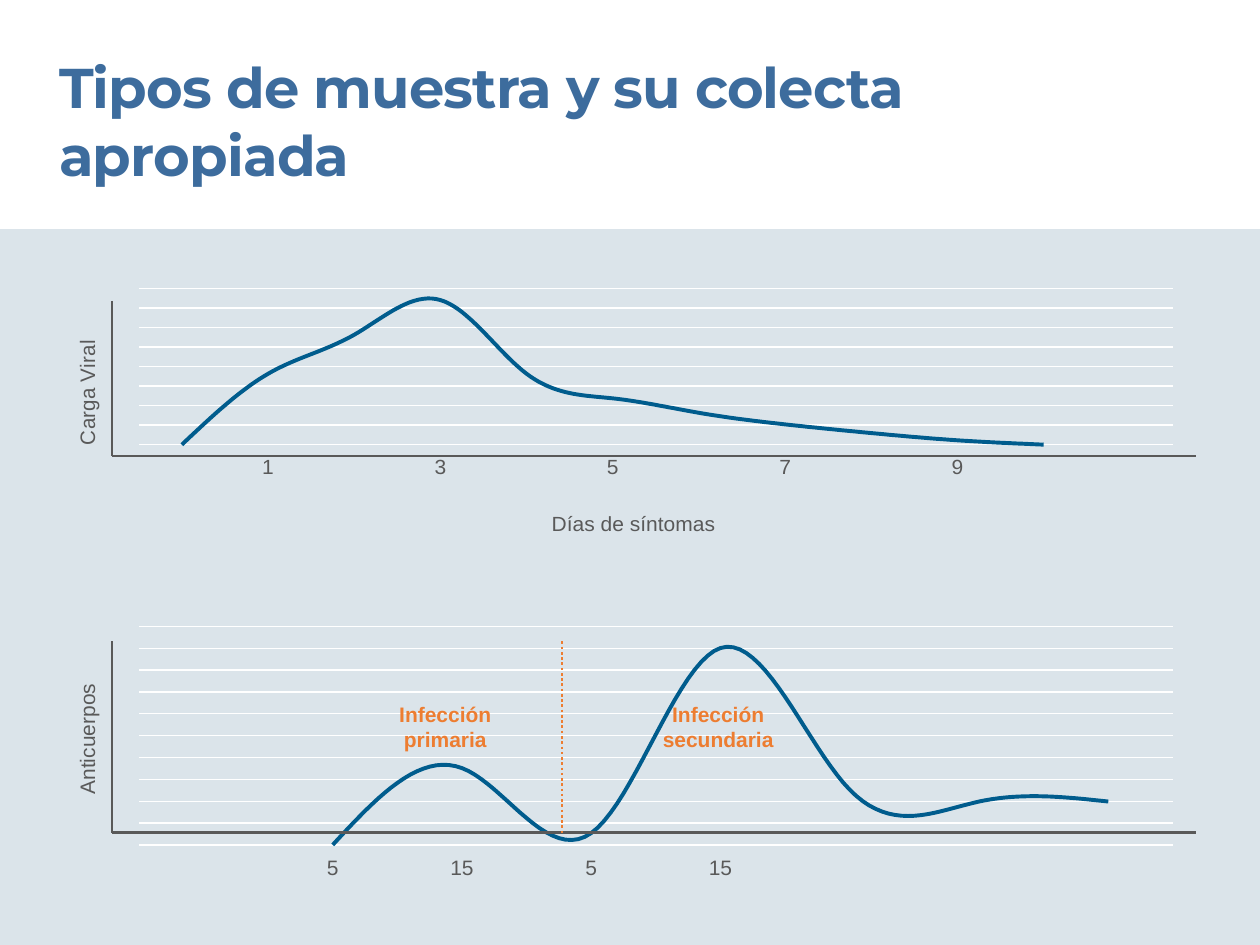
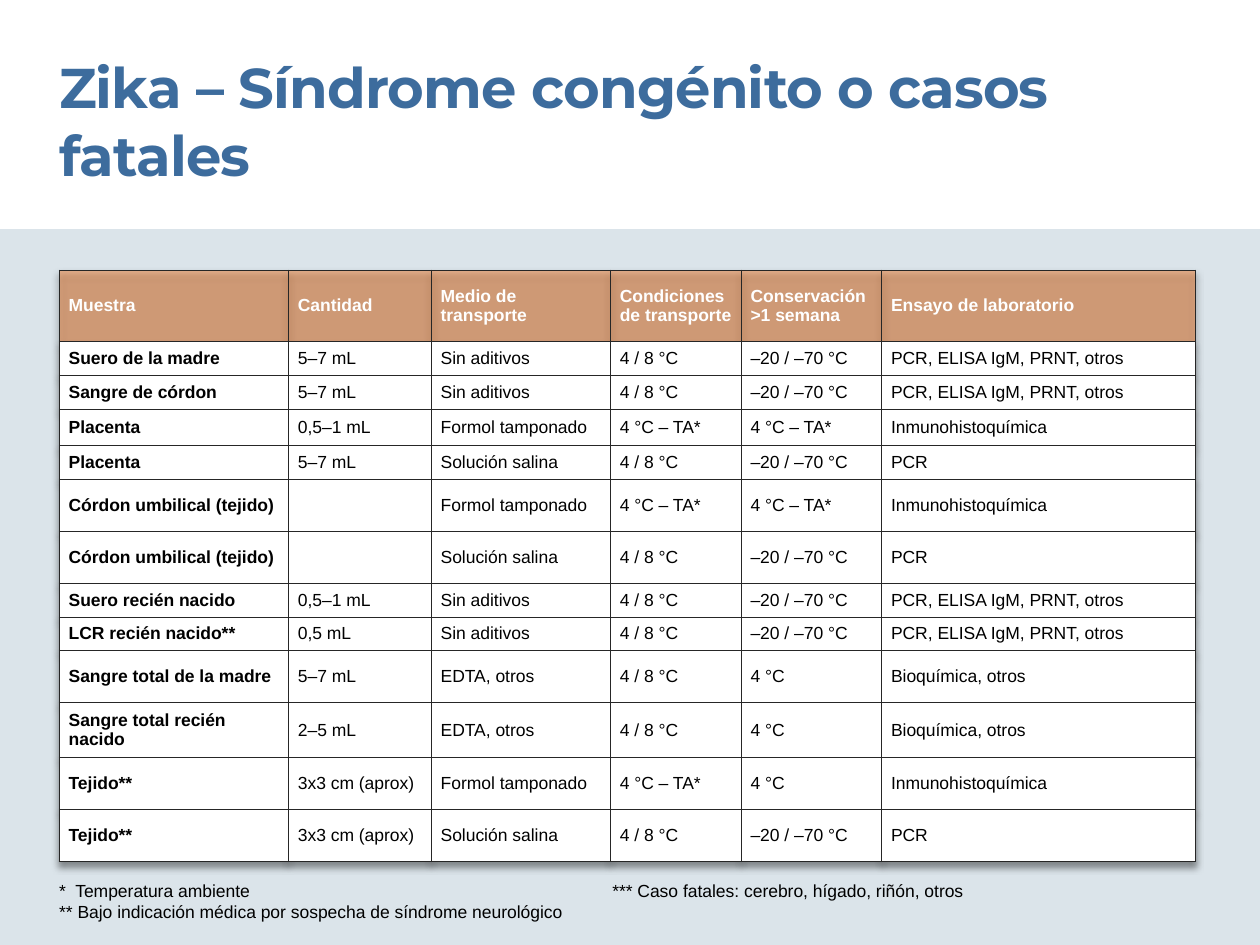
from dataclasses import dataclass

import lxml.etree
import pptx
import pptx.chart.data
import pptx.dml.color
import pptx.enum.chart
import pptx.enum.dml
import pptx.enum.shapes
import pptx.enum.text
import pptx.oxml.ns
import pptx.oxml.xmlchemy
import pptx.util

Pt = pptx.util.Pt
qn = pptx.oxml.ns.qn
new_element = pptx.oxml.xmlchemy.OxmlElement


@dataclass(frozen=True)
class Theme:
    band: str = "DBE4EA"
    heading: str = "3D6C9D"
    curve: str = "005C8D"
    axis: str = "595959"
    accent: str = "ED7D31"
    border: str = "262626"
    black: str = "000000"
    white: str = "FFFFFF"
    heading_font: str = "Montserrat"
    body_font: str = "Arial"
    heading_size: int = 32
    label_size: int = 12
    table_size: int = 10


THEME = Theme()
LEFT, WIDTH = 33.84, 649.44
RIGHT = LEFT + WIDTH
AXIS_LEFT = 64.08

COLUMN_WIDTHS = [131, 81.6, 102.4, 74.7, 80.3, 179.3]
ROW_HEIGHTS = [41, 18, 18, 21, 18, 29.7, 29.7, 18, 18, 29.7, 29.7, 29.7, 29.7]
COLD, FROZEN, AMBIENT = "4 / 8 °C", "–20 / –70 °C", "4 °C – TA*"
PLAIN, FORMALIN, SALINE = "Sin aditivos", "Formol tamponado", "Solución salina"
PANEL, TISSUE_TEST = "PCR, ELISA IgM, PRNT, otros", "Inmunohistoquímica"
SAMPLES = [
    ["Muestra", "Cantidad", "Medio de transporte", "Condiciones de transporte",
     "Conservación >1 semana", "Ensayo de laboratorio"],
    ["Suero de la madre", "5–7 mL", PLAIN, COLD, FROZEN, PANEL],
    ["Sangre de córdon", "5–7 mL", PLAIN, COLD, FROZEN, PANEL],
    ["Placenta", "0,5–1 mL", FORMALIN, AMBIENT, AMBIENT, TISSUE_TEST],
    ["Placenta", "5–7 mL", SALINE, COLD, FROZEN, "PCR"],
    ["Córdon umbilical (tejido)", "", FORMALIN, AMBIENT, AMBIENT, TISSUE_TEST],
    ["Córdon umbilical (tejido)", "", SALINE, COLD, FROZEN, "PCR"],
    ["Suero recién nacido", "0,5–1 mL", PLAIN, COLD, FROZEN, PANEL],
    ["LCR recién nacido**", "0,5 mL", PLAIN, COLD, FROZEN, PANEL],
    ["Sangre total de la madre", "5–7 mL", "EDTA, otros", COLD, "4 °C", "Bioquímica, otros"],
    ["Sangre total recién nacido", "2–5 mL", "EDTA, otros", COLD, "4 °C", "Bioquímica, otros"],
    ["Tejido**", "3x3 cm (aprox)", FORMALIN, AMBIENT, "4 °C", TISSUE_TEST],
    ["Tejido**", "3x3 cm (aprox)", SALINE, COLD, FROZEN, "PCR"],
]


def rgb(color):
    return pptx.dml.color.RGBColor.from_string(color)


def style_font(font, size, color, bold=False, name=THEME.body_font):
    font.name = name
    font.size = Pt(size)
    font.bold = bold
    font.color.rgb = rgb(color)


def add_span(para, text, size, color, bold=False, name=THEME.body_font):
    span = para.add_run()
    span.text = text
    style_font(span.font, size, color, bold, name)
    return span


def add_text(page, left, top, width, height, lines, size, color,
             bold=False, name=THEME.body_font, centred=False):
    box = page.shapes.add_textbox(Pt(left), Pt(top), Pt(width), Pt(height))
    frame = box.text_frame
    frame.word_wrap = True
    frame.auto_size = pptx.enum.text.MSO_AUTO_SIZE.SHAPE_TO_FIT_TEXT
    frame.margin_left = frame.margin_top = frame.margin_right = frame.margin_bottom = 0
    spans = []
    for index, line in enumerate(lines):
        para = frame.add_paragraph() if index else frame.paragraphs[0]
        if centred:
            para.alignment = pptx.enum.text.PP_ALIGN.CENTER
        spans.append(add_span(para, line, size, color, bold, name))
    return spans


def add_page(deck, title):
    page = deck.slides.add_slide(deck.slide_layouts[6])
    band = page.shapes.add_shape(pptx.enum.shapes.MSO_SHAPE.RECTANGLE,
                                 Pt(0), Pt(131), Pt(720), Pt(409))
    band.shadow.inherit = False
    band.fill.solid()
    band.fill.fore_color.rgb = rgb(THEME.band)
    band.line.fill.background()
    [span] = add_text(page, LEFT, 30.24, 615.6, 77.8, [title], THEME.heading_size,
                      THEME.heading, True, THEME.heading_font)
    span.font._element.set("spc", "-50")
    return page


def add_line(page, start, end, color=THEME.axis, dash=None):
    line = page.shapes.add_connector(pptx.enum.shapes.MSO_CONNECTOR.STRAIGHT,
                                     *map(Pt, start + end))
    line.line.color.rgb = rgb(color)
    line.line.width = Pt(1.5)
    if dash:
        line.line.dash_style = dash
    lxml.etree.SubElement(line._element.spPr, qn("a:effectLst"))


def set_layout(parent, index, **fractions):
    old = parent.find(qn("c:layout"))
    if old is not None:
        parent.remove(old)
    layout = new_element("c:layout")
    manual = lxml.etree.SubElement(layout, qn("c:manualLayout"))
    if "w" in fractions:
        lxml.etree.SubElement(manual, qn("c:layoutTarget")).set("val", "inner")
    for side in "xy":
        lxml.etree.SubElement(manual, qn(f"c:{side}Mode")).set("val", "edge")
    for key, value in fractions.items():
        lxml.etree.SubElement(manual, qn(f"c:{key}")).set("val", str(value))
    parent.insert(index, layout)


def add_axis_title(axis, text, x, y, upright=False):
    axis.has_title = True
    title = axis.axis_title
    add_span(title.text_frame.paragraphs[0], text, THEME.label_size, THEME.axis)
    if upright:
        body = title.text_frame._txBody.bodyPr
        body.set("rot", "-5400000")
        body.set("vert", "horz")
    set_layout(title._element, 1, x=x, y=y)


def add_curve(page, top, categories, values, maximum, steps, plot_top, plot_height):
    data = pptx.chart.data.CategoryChartData()
    data.categories = categories
    data.add_series("Series 1", values)
    chart = page.shapes.add_chart(pptx.enum.chart.XL_CHART_TYPE.LINE, Pt(LEFT), Pt(top),
                                  Pt(WIDTH), Pt(147.6), data).chart
    style_font(chart.font, THEME.table_size, THEME.black)
    chart.has_legend = chart.has_title = False
    chart.plots[0].vary_by_categories = False
    series = chart.plots[0].series[0]
    series.smooth = True
    series.format.line.color.rgb = rgb(THEME.curve)
    series.format.line.width = Pt(2.25)
    series.marker.style = pptx.enum.chart.XL_MARKER_STYLE.NONE
    for axis in (chart.category_axis, chart.value_axis):
        axis.major_tick_mark = axis.minor_tick_mark = pptx.enum.chart.XL_TICK_MARK.NONE
        axis.format.line.fill.background()
    chart.category_axis.tick_label_position = pptx.enum.chart.XL_TICK_LABEL_POSITION.LOW
    style_font(chart.category_axis.tick_labels.font, THEME.label_size, THEME.axis)
    scale = chart.value_axis
    scale.tick_label_position = pptx.enum.chart.XL_TICK_LABEL_POSITION.NONE
    scale.minimum_scale, scale.maximum_scale = 0, maximum
    scale.major_unit = maximum / steps
    scale.has_major_gridlines = True
    scale.major_gridlines.format.line.color.rgb = rgb(THEME.white)
    scale.major_gridlines.format.line.width = Pt(0.75)
    set_layout(chart._chartSpace.find(".//" + qn("c:plotArea")), 0,
               x=0.07, y=plot_top, w=0.91, h=plot_height)
    return chart


def add_axes(page, top, bottom):
    add_line(page, (RIGHT, bottom), (AXIS_LEFT, bottom))
    add_line(page, (AXIS_LEFT, top), (AXIS_LEFT, bottom))


def add_borders(cell):
    properties = cell._tc.get_or_add_tcPr()
    for index, side in enumerate(("lnL", "lnR", "lnT", "lnB")):
        line = new_element(f"a:{side}")
        line.set("w", str(Pt(0.5)))
        fill = lxml.etree.SubElement(line, qn("a:solidFill"))
        lxml.etree.SubElement(fill, qn("a:srgbClr")).set("val", THEME.border)
        properties.insert(index, line)


def set_alpha(color, percent):
    lxml.etree.SubElement(color, qn("a:alpha")).set("val", str(percent * 1000))


def add_table_shadow(table):
    effects = new_element("a:effectLst")
    shadow = lxml.etree.SubElement(effects, qn("a:outerShdw"))
    shadow.set("blurRad", str(Pt(4)))
    shadow.set("dist", str(Pt(3)))
    shadow.set("dir", "5400000")
    color = lxml.etree.SubElement(shadow, qn("a:srgbClr"))
    color.set("val", THEME.black)
    set_alpha(color, 40)
    table._tbl.tblPr.insert(0, effects)


def fill_cell(cell, text, header, bold):
    cell.vertical_anchor = pptx.enum.text.MSO_ANCHOR.MIDDLE
    cell.margin_left = cell.margin_right = Pt(5.4)
    cell.margin_top = cell.margin_bottom = Pt(3.6)
    cell.fill.solid()
    cell.fill.fore_color.rgb = rgb(THEME.accent if header else THEME.white)
    if header:
        set_alpha(cell._tc.tcPr.find(".//" + qn("a:srgbClr")), 50)
    add_borders(cell)
    if text:
        add_span(cell.text_frame.paragraphs[0], text, THEME.table_size,
                 THEME.white if header else THEME.black, bold)


def add_sample_table(page, top):
    table = page.shapes.add_table(len(SAMPLES), len(COLUMN_WIDTHS), Pt(LEFT), Pt(top),
                                  Pt(WIDTH), Pt(sum(ROW_HEIGHTS))).table
    table.horz_banding = False
    add_table_shadow(table)
    for column, width in zip(table.columns, COLUMN_WIDTHS):
        column.width = Pt(width)
    for row, height in zip(table.rows, ROW_HEIGHTS):
        row.height = Pt(height)
    for row, texts in enumerate(SAMPLES):
        for column, text in enumerate(texts):
            fill_cell(table.cell(row, column), text, row == 0, row == 0 or column == 0)


def build_curves_page(deck):
    page = add_page(deck, "Tipos de muestra y su colecta apropiada")
    viral = add_curve(page, 162, ["", "1", "", "3", "", "5", "", "7", "", "9", "", ""],
                      [0, 49, 76, 100, 49, 32, 22, 14, 8, 3, 0, None], 108, 8, 0.02, 0.62)
    add_axis_title(viral.category_axis, "Días de síntomas", 0.43, 0.89)
    add_axis_title(viral.value_axis, "Carga Viral", 0.01, 0.22, True)
    antibodies = add_curve(page, 355, ["", "5", "15", "5", "15", "", "", ""],
                           [None, 0, 39, 6, 100, 28, 22, 22], 111, 10, 0.02, 0.85)
    add_axis_title(antibodies.value_axis, "Anticuerpos", 0.01, 0.23, True)
    add_axes(page, 172, 260.64)
    add_axes(page, 366.5, 475.9)
    add_line(page, (321.1, 366.5), (321.1, 475.9), THEME.accent,
             pptx.enum.dml.MSO_LINE.ROUND_DOT)
    for left, width, text in ((221, 67, "Infección primaria"),
                              (371.5, 77.8, "Infección secundaria")):
        add_text(page, left, 401, width, 28.8, [text], THEME.label_size, THEME.accent,
                 True, centred=True)


def build_samples_page(deck):
    page = add_page(deck, "Zika – Síndrome congénito o casos fatales")
    add_sample_table(page, 154.3)
    add_text(page, LEFT, 502.6, 297.4, 24.5,
             ["*  Temperatura ambiente",
              "** Bajo indicación médica por sospecha de síndrome neurológico"],
             THEME.table_size, THEME.black)
    add_text(page, 349.9, 502.6, 247.7, 12.2,
             ["*** Caso fatales: cerebro, hígado, riñón, otros"],
             THEME.table_size, THEME.black)


def main():
    deck = pptx.Presentation()
    deck.slide_width, deck.slide_height = Pt(720), Pt(540)
    build_curves_page(deck)
    build_samples_page(deck)
    deck.save("out.pptx")


if __name__ == "__main__":
    main()
